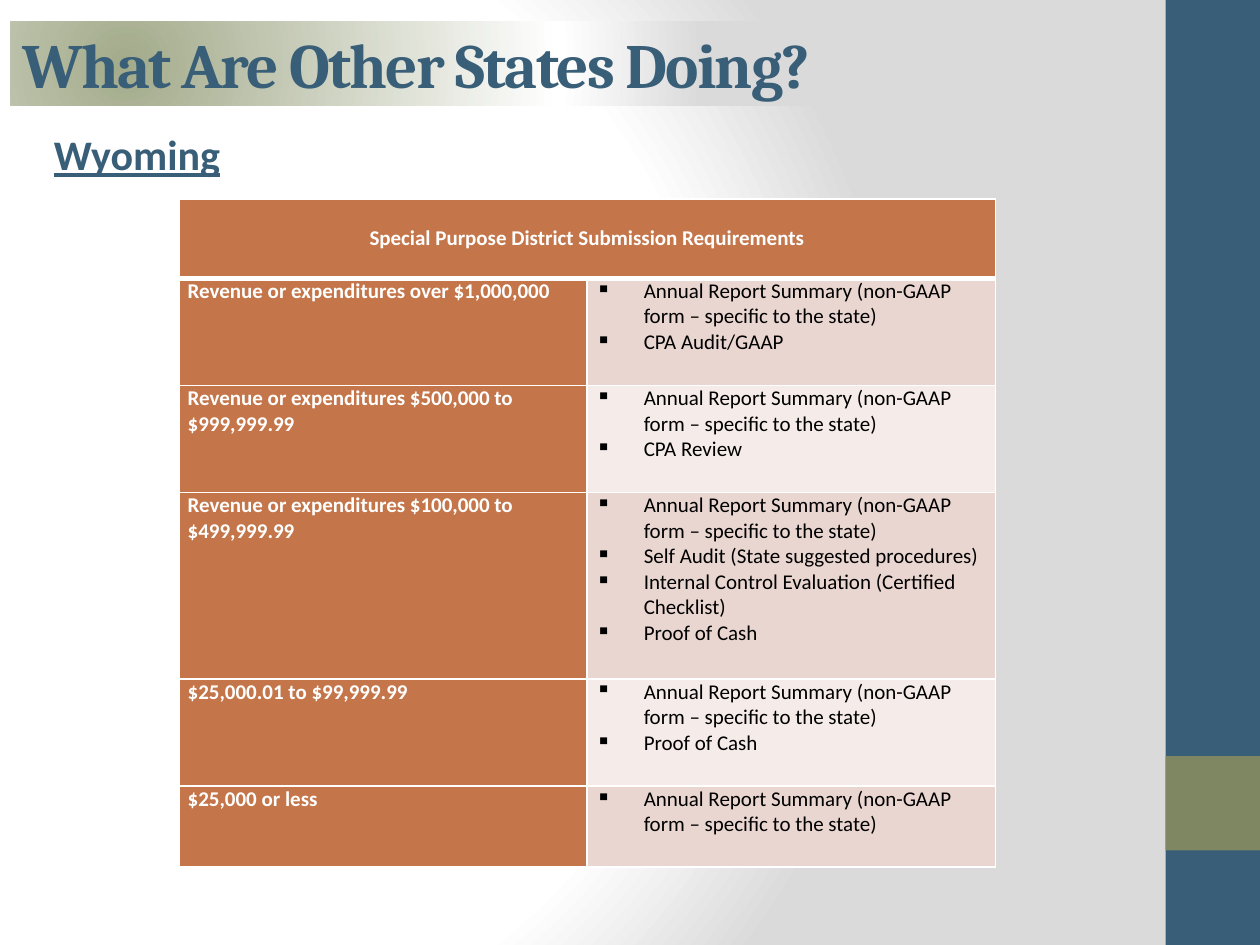
from lxml import etree
from pptx import Presentation
from pptx.dml.color import RGBColor
from pptx.enum.shapes import MSO_SHAPE
from pptx.enum.text import MSO_ANCHOR, PP_ALIGN
from pptx.oxml.ns import qn
from pptx.util import Inches, Pt

RECTANGLE = MSO_SHAPE.RECTANGLE
MIDDLE, TOP = MSO_ANCHOR.MIDDLE, MSO_ANCHOR.TOP
LEFT, CENTER = PP_ALIGN.LEFT, PP_ALIGN.CENTER

# Content
TITLE = "What Are Other States Doing?"
STATE = "Wyoming"
TABLE_HEADING = "Special Purpose District Submission Requirements"
SUMMARY = "Annual Report Summary (non-GAAP form – specific to the state)"
REQUIREMENTS = [
    ("Revenue or expenditures over $1,000,000", [SUMMARY, "CPA Audit/GAAP"]),
    ("Revenue or expenditures $500,000 to $999,999.99", [SUMMARY, "CPA Review"]),
    ("Revenue or expenditures $100,000 to $499,999.99",
     [SUMMARY, "Self Audit (State suggested procedures)",
      "Internal Control Evaluation (Certified Checklist)", "Proof of Cash"]),
    ("$25,000.01 to $99,999.99", [SUMMARY, "Proof of Cash"]),
    ("$25,000 or less", [SUMMARY]),
]
ROW_HEIGHTS = [0.63, 0.85, 0.85, 1.48, 0.85, 0.64]
COLUMN_WIDTH = 3.24

# Colours
BLUE, OLIVE, SAGE = "395E78", "7E8762", "A3AB8B"
WHITE, BLACK, GREY = "FFFFFF", "000000", "DADADA"
ORANGE, BANDS = "C4764A", ("EAD6D0", "F5ECE9")


def color(value):
    return RGBColor.from_string(value)


def add_solid(parent, value):
    fill = etree.SubElement(parent, qn("a:solidFill"))
    etree.SubElement(fill, qn("a:srgbClr"), val=value)


def set_radial_gradient(fill, element, center_color):
    """Fade from the centre colour through white to grey."""
    fill.gradient()
    gradient = element.find(".//" + qn("a:gradFill"))
    for child in list(gradient):
        gradient.remove(child)
    stops = etree.SubElement(gradient, qn("a:gsLst"))
    for position, value in ((0, center_color), (75, WHITE), (100, GREY)):
        stop = etree.SubElement(stops, qn("a:gs"), pos=str(position * 1000))
        etree.SubElement(stop, qn("a:srgbClr"), val=value)
    circle = etree.SubElement(gradient, qn("a:path"), {"path": "circle"})
    etree.SubElement(circle, qn("a:fillToRect"),
                     l="20000", t="50000", r="100000", b="50000")


def add_rectangle(slide, left, top, width, height, fill=None):
    shape = slide.shapes.add_shape(
        RECTANGLE, Inches(left), Inches(top), Inches(width), Inches(height))
    shape.shadow.inherit = False
    shape.line.fill.background()
    if fill:
        shape.fill.solid()
        shape.fill.fore_color.rgb = color(fill)
    return shape


def write(frame, lines, size=12, font="Calibri", ink=BLACK, bold=False,
          underline=False, align=LEFT, spacing=0, bullet=None):
    frame.word_wrap = True
    for index, line in enumerate(lines):
        paragraph = frame.add_paragraph() if index else frame.paragraphs[0]
        paragraph.alignment = align
        run = paragraph.add_run()
        run.text = line
        run.font.size, run.font.name = Pt(size), font
        run.font.bold, run.font.underline = bold, underline
        run.font.color.rgb = color(ink)
        if spacing:
            run.font._element.set("spc", str(spacing * 100))
        if bullet:
            properties = paragraph._p.get_or_add_pPr()
            properties.set("marL", str(Inches(0.38)))
            properties.set("indent", str(-Inches(0.38)))
            etree.SubElement(properties, qn("a:buChar"), char=bullet)


def format_cell(cell, fill, anchor=TOP, top_line=1, bottom_line=1):
    cell.margin_left = cell.margin_right = Inches(0.07)
    cell.margin_top = cell.margin_bottom = 0
    cell.vertical_anchor = anchor
    cell.fill.solid()
    cell.fill.fore_color.rgb = color(fill)
    properties = cell._tc.get_or_add_tcPr()
    borders = (("L", 1), ("R", 1), ("T", top_line), ("B", bottom_line))
    for index, (side, width) in enumerate(borders):
        line = etree.Element(qn("a:ln" + side), w=str(Pt(width)))
        add_solid(line, WHITE)
        properties.insert(index, line)


def add_requirements_table(slide):
    shape = slide.shapes.add_table(
        len(ROW_HEIGHTS), 2, Inches(1.42), Inches(1.58),
        Inches(2 * COLUMN_WIDTH), Inches(sum(ROW_HEIGHTS)))
    table = shape.table
    for column in table.columns:
        column.width = Inches(COLUMN_WIDTH)
    for row, height in zip(table.rows, ROW_HEIGHTS):
        row.height = Inches(height)

    # Heading across both columns
    heading = table.cell(0, 0)
    heading.merge(table.cell(0, 1))
    for cell in table.rows[0].cells:
        format_cell(cell, ORANGE, anchor=MIDDLE, bottom_line=3)
    write(heading.text_frame, [TABLE_HEADING], ink=WHITE, bold=True, align=CENTER)

    # One row for each revenue level
    for row, (level, documents) in enumerate(REQUIREMENTS, start=1):
        top_line = 3 if row == 1 else 1
        level_cell, document_cell = table.cell(row, 0), table.cell(row, 1)
        format_cell(level_cell, ORANGE, top_line=top_line)
        write(level_cell.text_frame, [level], ink=WHITE, bold=True)
        format_cell(document_cell, BANDS[(row - 1) % 2], top_line=top_line)
        write(document_cell.text_frame, documents, bullet="▪")


def main():
    presentation = Presentation()
    presentation.slide_width, presentation.slide_height = Inches(10), Inches(7.5)
    slide = presentation.slides.add_slide(presentation.slide_layouts[6])

    # Background and side band
    set_radial_gradient(slide.background.fill, slide.element, WHITE)
    add_rectangle(slide, 9.25, 0, 0.75, 7.5, BLUE)
    add_rectangle(slide, 9.25, 6, 0.75, 0.75, OLIVE)

    # Title bar
    title = add_rectangle(slide, 0.08, 0.17, 9.17, 0.67)
    set_radial_gradient(title.fill, title.element, SAGE)
    title.text_frame.vertical_anchor = MIDDLE
    write(title.text_frame, [TITLE], size=36, font="Cambria", ink=BLUE,
          bold=True, spacing=-1)

    # State name
    state = slide.shapes.add_textbox(
        Inches(0.33), Inches(0.83), Inches(8.83), Inches(2.29))
    state.text_frame.margin_top = Inches(0.19)
    write(state.text_frame, [STATE], size=24, ink=BLUE, bold=True, underline=True)

    add_requirements_table(slide)
    presentation.save("out.pptx")


if __name__ == "__main__":
    main()
